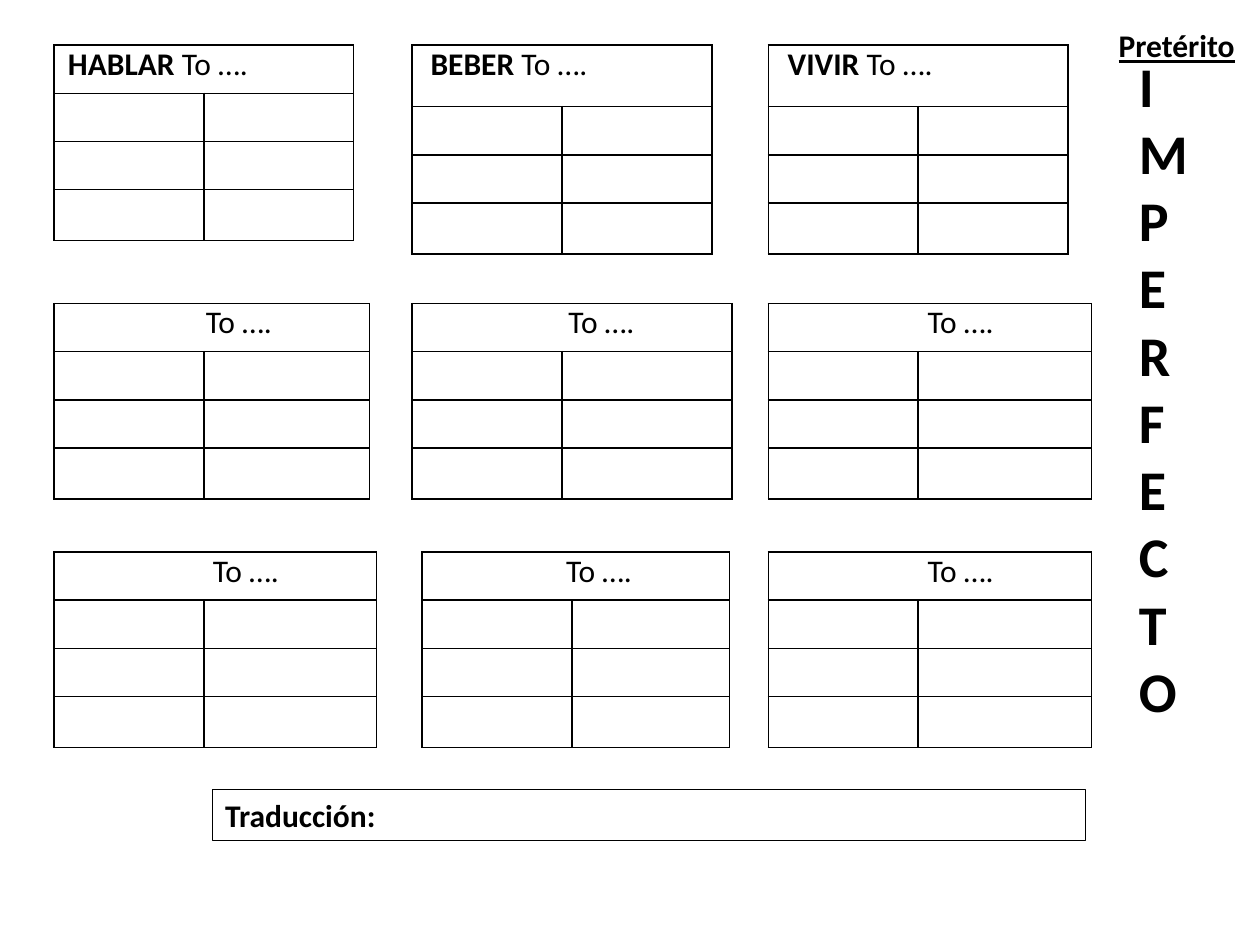
"""Builds a worksheet slide of blank conjugation tables for the Spanish imperfect tense."""
from lxml import etree
from pptx import Presentation
from pptx.dml.color import RGBColor
from pptx.enum.shapes import MSO_SHAPE
from pptx.enum.text import MSO_ANCHOR, PP_ALIGN
from pptx.oxml.ns import qn
from pptx.util import Cm, Pt

RECTANGLE = MSO_SHAPE.RECTANGLE
MIDDLE = MSO_ANCHOR.MIDDLE
LEFT = PP_ALIGN.LEFT
BLACK = RGBColor(0, 0, 0)
FONT = "Calibri"

PROMPT = "To …."
TENSE = "Pretérito"
TENSE_NAME = "IMPERFECTO"
TRANSLATION = "Traducción:"

LEFTS = (1.09, 8.31, 15.49)
TOPS = (0.91, 6.12, 11.13)
COLUMN_WIDTH = 3.02
ROW_HEIGHTS = (0.97, 0.97, 0.97, 1.03)
TALL_HEADER = 1.24
SHIFTED_LEFT = 8.51

VERB_TABLES = [
    [
        {"verb": "HABLAR", "indent": 0.28},
        {"verb": "BEBER", "indent": 0.37, "header": TALL_HEADER},
        {"verb": "VIVIR", "indent": 0.39, "header": TALL_HEADER},
    ],
    [{"indent": 3.06}, {"indent": 3.15}, {"indent": 3.21}],
    [{"indent": 3.2}, {"indent": 2.9, "left": SHIFTED_LEFT}, {"indent": 3.21}],
]


def add_text(paragraph, text, size=18, bold=False, underline=False):
    paragraph.alignment = LEFT
    run = paragraph.add_run()
    run.text = text
    run.font.name = FONT
    run.font.size = Pt(size)
    run.font.bold = bold
    run.font.underline = underline
    run.font.color.rgb = BLACK


def format_cell(cell):
    properties = cell._tc.get_or_add_tcPr()
    for side in ("lnL", "lnR", "lnT", "lnB"):
        line = etree.SubElement(properties, qn(f"a:{side}"), w=str(Pt(1)))
        fill = etree.SubElement(line, qn("a:solidFill"))
        etree.SubElement(fill, qn("a:srgbClr"), val=str(BLACK))
    cell.fill.background()
    cell.margin_left = cell.margin_right = Cm(0.18)
    cell.margin_top = cell.margin_bottom = 0


def add_verb_table(slide, left, top, indent, verb="", header=ROW_HEIGHTS[0]):
    heights = (header, *ROW_HEIGHTS[1:])
    table = slide.shapes.add_table(
        len(heights), 2, Cm(left), Cm(top), Cm(2 * COLUMN_WIDTH), Cm(sum(heights))
    ).table
    table.first_row = table.horz_banding = False
    for column in table.columns:
        column.width = Cm(COLUMN_WIDTH)
    for row, height in zip(table.rows, heights):
        row.height = Cm(height)
        for cell in row.cells:
            format_cell(cell)
    title = table.cell(0, 0)
    title.merge(table.cell(0, 1))
    title.margin_left = Cm(indent)
    paragraph = title.text_frame.paragraphs[0]
    if verb:
        add_text(paragraph, verb, bold=True)
    add_text(paragraph, f" {PROMPT}" if verb else PROMPT)


def add_text_box(slide, left, top, width, height, text, wrap=True, **text_format):
    box = slide.shapes.add_textbox(Cm(left), Cm(top), Cm(width), Cm(height))
    box.text_frame.word_wrap = wrap
    add_text(box.text_frame.paragraphs[0], text, **text_format)
    return box


def add_translation_box(slide):
    shape = slide.shapes.add_shape(RECTANGLE, Cm(4.29), Cm(15.92), Cm(17.6), Cm(1.02))
    shape.shadow.inherit = False
    shape.fill.background()
    shape.line.color.rgb = BLACK
    shape.line.width = Pt(0.75)
    shape.text_frame.vertical_anchor = MIDDLE
    add_text(shape.text_frame.paragraphs[0], TRANSLATION, bold=True)


def main():
    presentation = Presentation()
    presentation.slide_width = Cm(25.4)
    presentation.slide_height = Cm(19.05)
    slide = presentation.slides.add_slide(presentation.slide_layouts[6])
    for top, table_row in zip(TOPS, VERB_TABLES):
        for left, details in zip(LEFTS, table_row):
            add_verb_table(slide, **{"left": left, "top": top, **details})
    vertical = add_text_box(slide, 22.71, 0.91, 2.13, 18.14, TENSE_NAME, size=32, bold=True)
    vertical.text_frame._txBody.bodyPr.set("vert", "wordArtVert")
    add_translation_box(slide)
    add_text_box(slide, 22.3, 0.41, 2.87, 1.02, TENSE, wrap=False, bold=True, underline=True)
    presentation.save("out.pptx")


if __name__ == "__main__":
    main()
